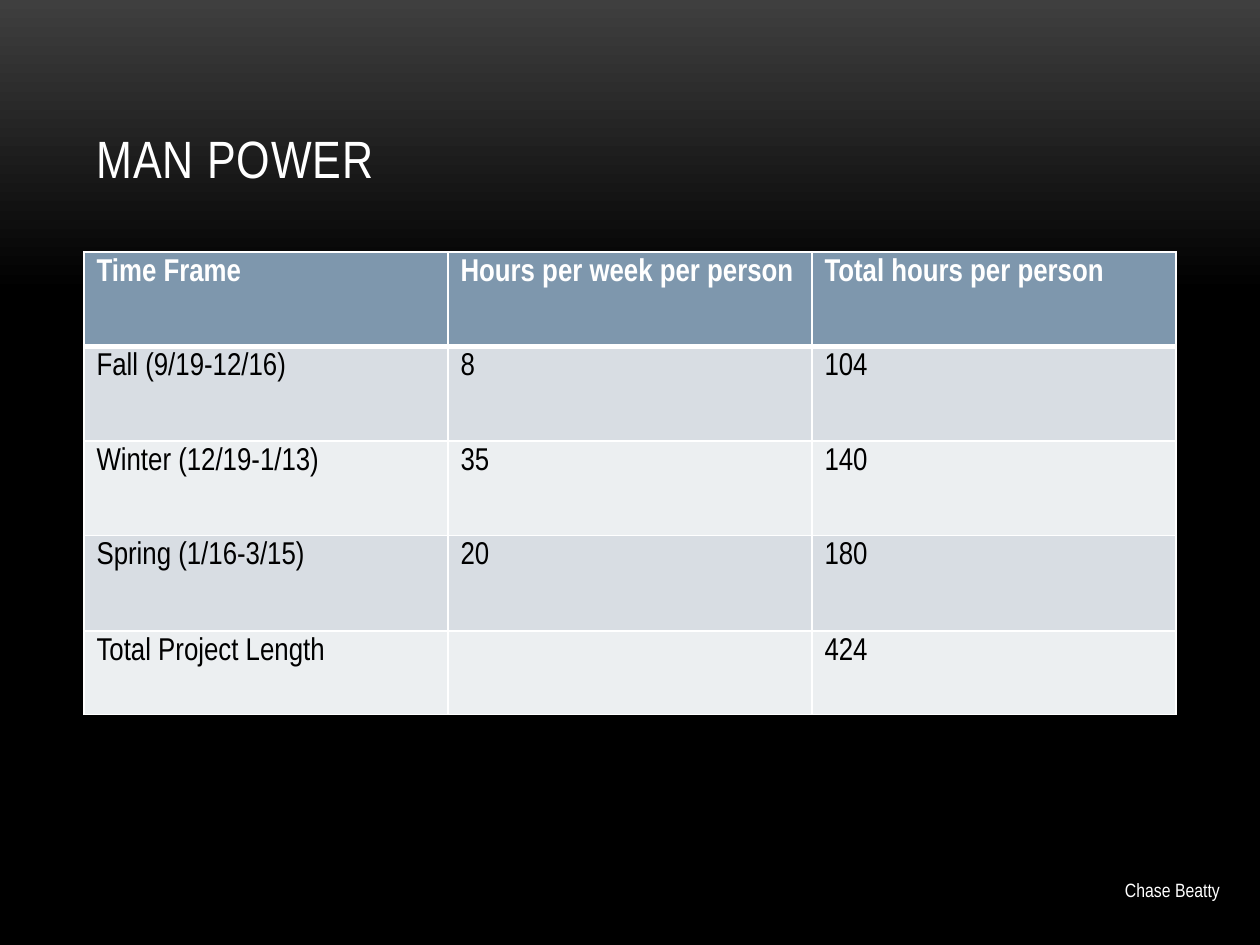
import copy

import pptx
import pptx.dml.color
import pptx.enum.text
import pptx.oxml.ns
import pptx.util
from lxml import etree

WIDTH = pptx.util.Inches(10)
HEIGHT = pptx.util.Inches(7.5)
FONT = "Arial Narrow"
WHITE = "FFFFFF"
BLACK = "000000"
HEADER_FILL = "7E97AD"
BAND_FILLS = ["ECEFF1", "D8DDE3"]
MARGIN = 1 / 15
CONTENT_WIDTH = 13 / 15
ROW_HEIGHTS = [0.75, 0.75, 0.75, 0.76, 0.66]
SCHEDULE = [
    ["Time Frame", "Hours per week per person", "Total hours per person"],
    ["Fall (9/19-12/16)", "8", "104"],
    ["Winter (12/19-1/13)", "35", "140"],
    ["Spring (1/16-3/15)", "20", "180"],
    ["Total Project Length", "", "424"],
]


def colour(code):
    return pptx.dml.color.RGBColor.from_string(code)


def share(left, top, width, height):
    return [int(left * WIDTH), int(top * HEIGHT), int(width * WIDTH), int(height * HEIGHT)]


def style_text(para, size, code, bold=False):
    para.font.name = FONT
    para.font.size = pptx.util.Pt(size)
    para.font.bold = bold
    para.font.color.rgb = colour(code)


def paint_background(page):
    fill = page.background.fill
    fill.gradient()
    fill.gradient_angle = 270
    first, middle = fill.gradient_stops
    first.color.rgb = colour("3F3F3F")
    first.position = 0
    middle.color.rgb = colour(BLACK)
    middle.position = 0.31
    stop_list = page.background._cSld.find(".//" + pptx.oxml.ns.qn("a:gsLst"))
    last = copy.deepcopy(stop_list[1])
    last.set("pos", "100000")
    stop_list.append(last)


def add_text(page, text, area, size, anchor, wrap, spacing=0):
    box = page.shapes.add_textbox(*share(*area))
    frame = box.text_frame
    frame.word_wrap = wrap
    frame.vertical_anchor = anchor
    para = frame.paragraphs[0]
    span = para.add_run()
    span.text = text
    style_text(para, size, WHITE)
    if spacing:
        span._r.get_or_add_rPr().set("spc", str(int(spacing * 100)))


def add_border(cell, side, code, points):
    properties = cell._tc.get_or_add_tcPr()
    line = etree.SubElement(properties, pptx.oxml.ns.qn("a:" + side), w=str(pptx.util.Pt(points)))
    solid = etree.SubElement(line, pptx.oxml.ns.qn("a:solidFill"))
    etree.SubElement(solid, pptx.oxml.ns.qn("a:srgbClr"), val=code)


def fill_cell(cell, text, row):
    header = row == 0
    weights = {"lnL": 1, "lnR": 1, "lnT": 3 if row == 1 else 1, "lnB": 3 if header else 1}
    for side, points in weights.items():
        add_border(cell, side, WHITE, points)
    cell.fill.solid()
    cell.fill.fore_color.rgb = colour(HEADER_FILL if header else BAND_FILLS[row % 2])
    cell.text = text
    style_text(cell.text_frame.paragraphs[0], 18, WHITE if header else BLACK, header)


def add_schedule(page):
    area = share(MARGIN, 2 / 7.5, CONTENT_WIDTH, sum(ROW_HEIGHTS) / 7.5)
    table = page.shapes.add_table(len(SCHEDULE), len(SCHEDULE[0]), *area).table
    for row, texts in enumerate(SCHEDULE):
        table.rows[row].height = pptx.util.Inches(ROW_HEIGHTS[row])
        for column, text in enumerate(texts):
            fill_cell(table.cell(row, column), text, row)


def main():
    deck = pptx.Presentation()
    deck.slide_width = WIDTH
    deck.slide_height = HEIGHT
    page = deck.slides.add_slide(deck.slide_layouts[6])
    anchors = pptx.enum.text.MSO_ANCHOR
    paint_background(page)
    add_text(page, "MAN POWER", (MARGIN, 0.04, CONTENT_WIDTH, 1 / 6), 30, anchors.BOTTOM, True, 0.5)
    add_schedule(page)
    add_text(page, "Chase Beatty", (0.883, 6.92 / 7.5, 0.1, 0.29 / 7.5), 11, anchors.TOP, False)
    deck.save("out.pptx")


if __name__ == "__main__":
    main()
